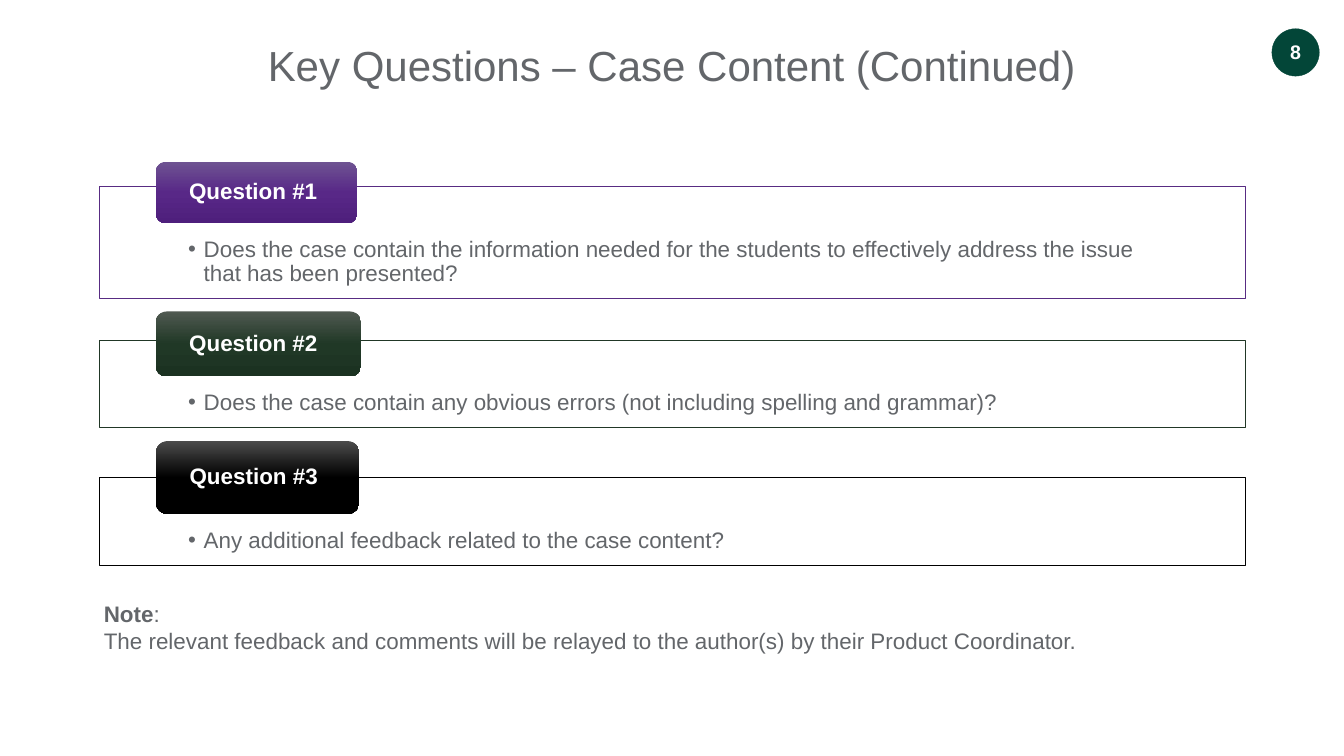
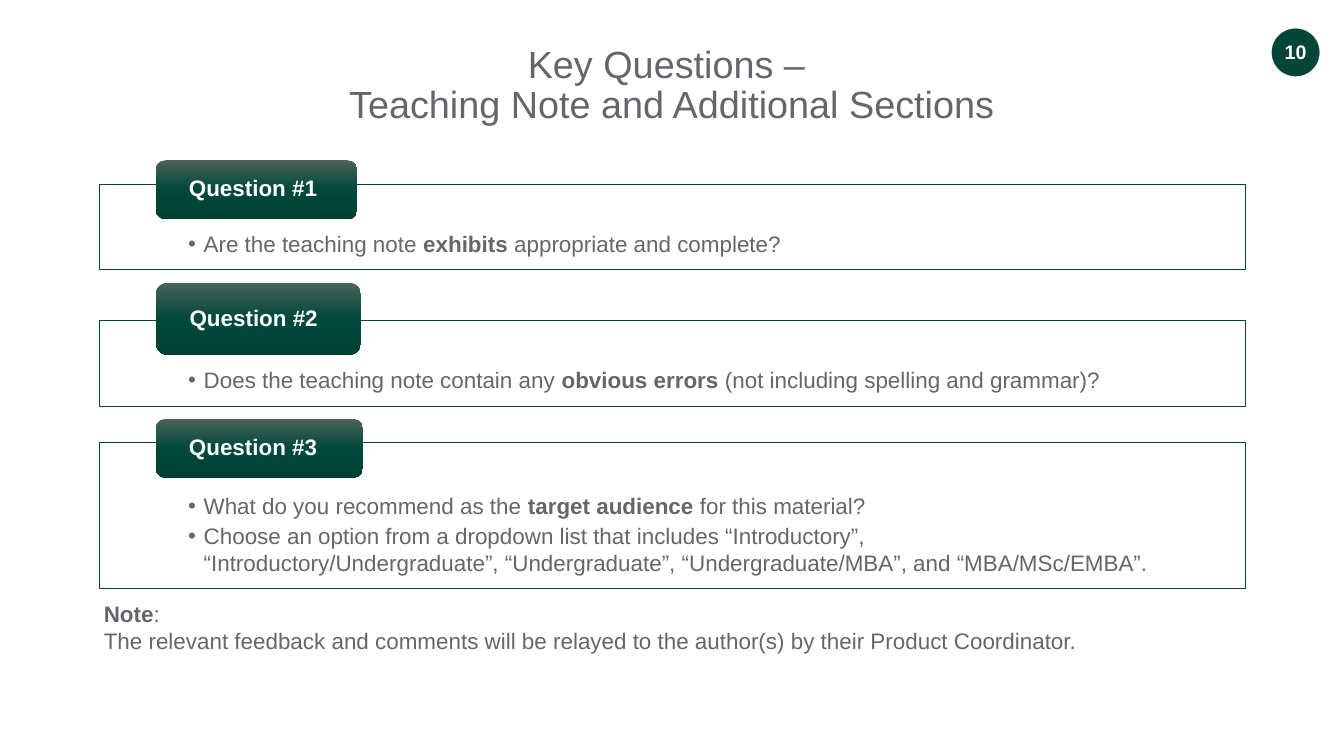
from dataclasses import dataclass

from lxml import etree
from pptx import Presentation
from pptx.dml.color import RGBColor
from pptx.enum.shapes import MSO_SHAPE
from pptx.enum.text import MSO_ANCHOR, PP_ALIGN
from pptx.oxml.ns import qn
from pptx.util import Inches, Pt

LEFT, CENTER = PP_ALIGN.LEFT, PP_ALIGN.CENTER
TOP, MIDDLE = MSO_ANCHOR.TOP, MSO_ANCHOR.MIDDLE
RECTANGLE, OVAL = MSO_SHAPE.RECTANGLE, MSO_SHAPE.OVAL
ROUNDED = MSO_SHAPE.ROUNDED_RECTANGLE
BLANK_LAYOUT = 6


@dataclass(frozen=True)
class Theme:
    font: str = "Arial"
    text: str = "63666A"
    white: str = "FFFFFF"
    green: str = "034638"
    purple: str = "582C83"
    forest: str = "213726"
    black: str = "000000"
    title_size: int = 60
    long_title_size: int = 54
    body_size: int = 32
    number_size: int = 28
    outline: float = 0.5
    panel_opacity: int = 90


THEME = Theme()

# Top, middle and bottom colours of a badge, by outline colour
BADGE_SHADES = {
    THEME.purple: ("6E5392", "582887", "4E1F7C"),
    THEME.forest: ("505951", "203826", "1B3221"),
    THEME.black: ("4B4B4B", "000000", "000000"),
    THEME.green: ("4B625A", "00493A", "004133"),
}


@dataclass(frozen=True)
class Question:
    text: str
    color: str
    panel: tuple  # top, height
    badge: tuple  # top, width, height
    spacing: float = 0.9


NOTE = (
    "**Note**:\nThe relevant feedback and comments will be relayed "
    "to the author(s) by their Product Coordinator."
)

CONTENT_QUESTIONS = [
    Question(
        "Does the case contain the information needed for the students to "
        "effectively address the issue that has been presented?",
        THEME.purple, (3.7, 2.21), (3.21, 4, 1.22)),
    Question(
        "Does the case contain any obvious errors "
        "(not including spelling and grammar)?",
        THEME.forest, (6.74, 1.74), (6.18, 4.07, 1.29)),
    Question(
        "Any additional feedback related to the case content?",
        THEME.black, (9.47, 1.74), (8.75, 4.04, 1.45)),
]

TEACHING_QUESTIONS = [
    Question(
        "Are the teaching note **exhibits** appropriate and complete?",
        THEME.green, (3.65, 1.7), (3.18, 4, 1.17)),
    Question(
        "Does the teaching note contain any **obvious errors** "
        "(not including spelling and grammar)?",
        THEME.green, (6.35, 1.7), (5.61, 4.07, 1.43)),
    Question(
        "What do you recommend as the **target audience** for this material?\n"
        "Choose an option from a dropdown list that includes “Introductory”, "
        "“Introductory/Undergraduate”, “Undergraduate”, "
        "“Undergraduate/MBA”, and “MBA/MSc/EMBA”.",
        THEME.green, (8.78, 2.89), (8.31, 4.11, 1.17), spacing=1.0),
]


# Text
def add_bullet(para, indent=0.31):
    para.level = 1
    properties = para._p.get_or_add_pPr()
    properties.set("marL", str(Inches(indent)))
    properties.set("indent", str(-Inches(indent)))
    etree.SubElement(properties, qn("a:buFont")).set("typeface", THEME.font)
    etree.SubElement(properties, qn("a:buChar")).set("char", "•")


def write_text(box, text, size=THEME.body_size, color=THEME.text, bold=False,
               align=LEFT, anchor=TOP, margins=(0.1, 0.05, 0.1, 0.05),
               spacing=1.0, space_after=0, bullet=False, wrap=True):
    """Write paragraphs split at \\n and lines at \\v; ** marks bold spans."""
    frame = box.text_frame
    frame.word_wrap = wrap
    frame.vertical_anchor = anchor
    (frame.margin_left, frame.margin_top,
     frame.margin_right, frame.margin_bottom) = map(Inches, margins)
    for index, content in enumerate(text.split("\n")):
        para = frame.add_paragraph() if index else frame.paragraphs[0]
        para.alignment = align
        para.line_spacing = spacing
        para.space_after = Pt(space_after)
        if bullet:
            add_bullet(para)
        for line_index, line in enumerate(content.split("\v")):
            if line_index:
                para.add_line_break()
            for part_index, part in enumerate(line.split("**")):
                if not part:
                    continue
                span = para.add_run()
                span.text = part
                span.font.name = THEME.font
                span.font.size = Pt(size)
                span.font.bold = bold or part_index % 2 == 1
                span.font.color.rgb = RGBColor.from_string(color)


def add_text(page, text, left, top, width, height, **text_format):
    box = page.shapes.add_textbox(*map(Inches, (left, top, width, height)))
    write_text(box, text, **text_format)


# Shapes
def add_box(page, kind, left, top, width, height, fill, line=None):
    box = page.shapes.add_shape(kind, *map(Inches, (left, top, width, height)))
    box.shadow.inherit = False
    box.fill.solid()
    box.fill.fore_color.rgb = RGBColor.from_string(fill)
    if line:
        box.line.color.rgb = RGBColor.from_string(line)
        box.line.width = Pt(THEME.outline)
    else:
        box.line.fill.background()
    return box


def set_opacity(box, percent):
    color = box.element.spPr.find(qn("a:solidFill")).find(qn("a:srgbClr"))
    etree.SubElement(color, qn("a:alpha")).set("val", str(percent * 1000))


def set_gradient(box, shades):
    box.fill.gradient()
    box.fill.gradient_angle = 270
    stops = box.element.spPr.find(qn("a:gradFill")).find(qn("a:gsLst"))
    for stop in list(stops):
        stops.remove(stop)
    for index, shade in enumerate(shades):
        stop = etree.SubElement(stops, qn("a:gs"), pos=str(index * 50000))
        etree.SubElement(stop, qn("a:srgbClr"), val=shade)


# Slide parts
def add_page_number(page, number):
    circle = add_box(page, OVAL, 25.23, 0.57, 0.94, 0.94,
                     THEME.green, THEME.green)
    write_text(circle, str(number), size=THEME.number_size, color=THEME.white,
               bold=True, align=CENTER, anchor=MIDDLE, margins=(0, 0, 0, 0.04),
               wrap=False)


def add_question(page, number, question, top_margin):
    panel_top, panel_height = question.panel
    panel = add_box(page, RECTANGLE, 1.96, panel_top, 22.75, panel_height,
                    THEME.white, question.color)
    set_opacity(panel, THEME.panel_opacity)
    write_text(panel, question.text, margins=(1.77, top_margin, 1.77, 0.25),
               spacing=question.spacing, space_after=5, bullet=True)

    badge_top, badge_width, badge_height = question.badge
    badge = add_box(page, ROUNDED, 3.09, badge_top, badge_width, badge_height,
                    question.color)
    set_gradient(badge, BADGE_SHADES[question.color])
    write_text(badge, f"Question #{number}", color=THEME.white, bold=True,
               anchor=MIDDLE, margins=(0.6, 0, 0.6, 0), spacing=0.9)


def add_question_page(deck, number, title, questions, title_size, top_margin):
    page = deck.slides.add_slide(deck.slide_layouts[BLANK_LAYOUT])
    add_page_number(page, number)
    add_text(page, title, 1.83, 0.8, 22.99, 1.37, size=title_size,
             align=CENTER, margins=(0.2, 0.1, 0.2, 0.1), spacing=0.9)
    for index, question in enumerate(questions, start=1):
        add_question(page, index, question, top_margin)
    add_text(page, NOTE, 1.96, 11.85, 22.99, 1.18)


def main():
    deck = Presentation()
    deck.slide_width = Inches(26.66)
    deck.slide_height = Inches(15)
    add_question_page(deck, 8, "Key Questions – Case Content (Continued)",
                      CONTENT_QUESTIONS, THEME.title_size, top_margin=1.02)
    add_question_page(
        deck, 10, "Key Questions – \vTeaching Note and Additional Sections",
        TEACHING_QUESTIONS, THEME.long_title_size, top_margin=0.98)
    deck.save("out.pptx")


if __name__ == "__main__":
    main()
